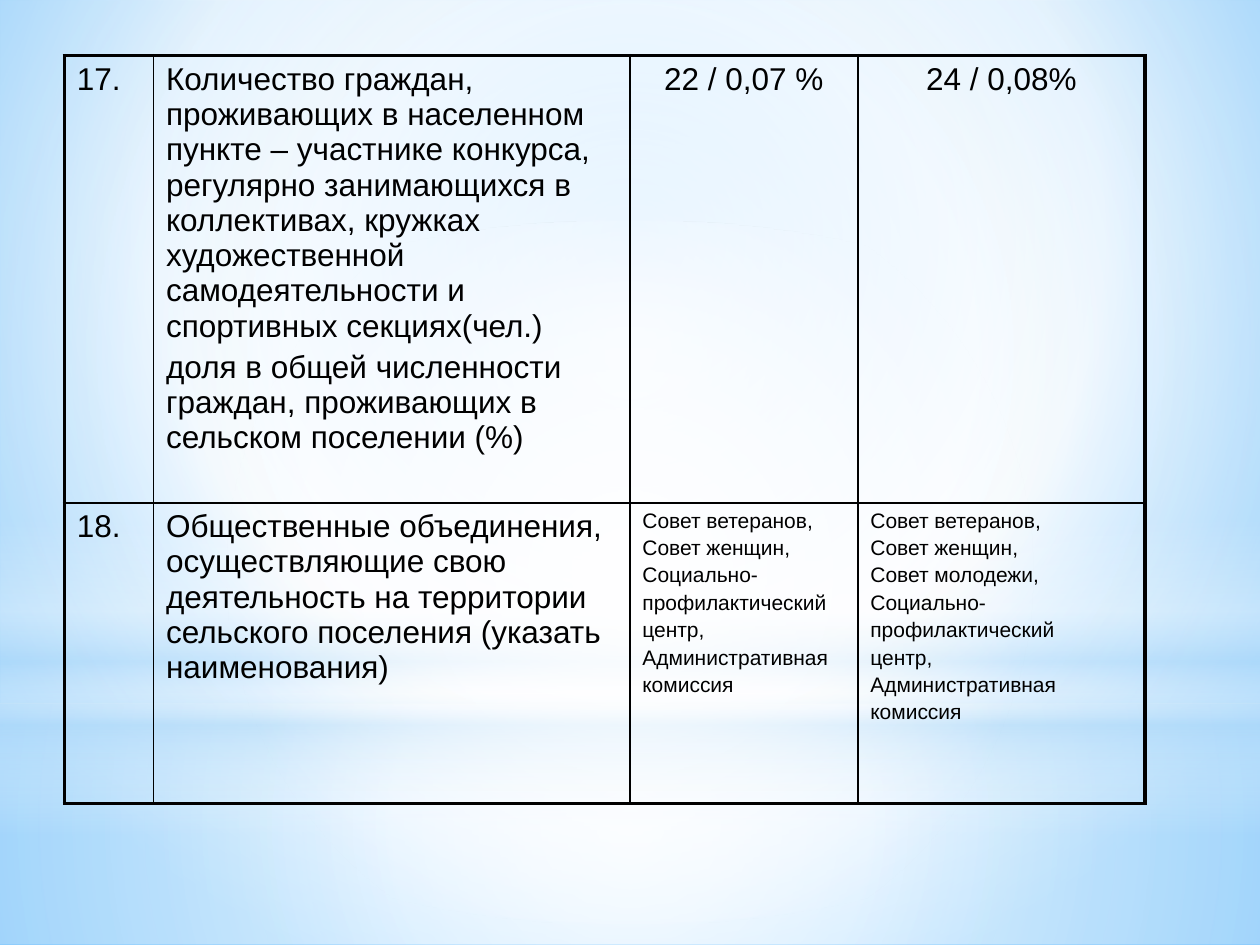
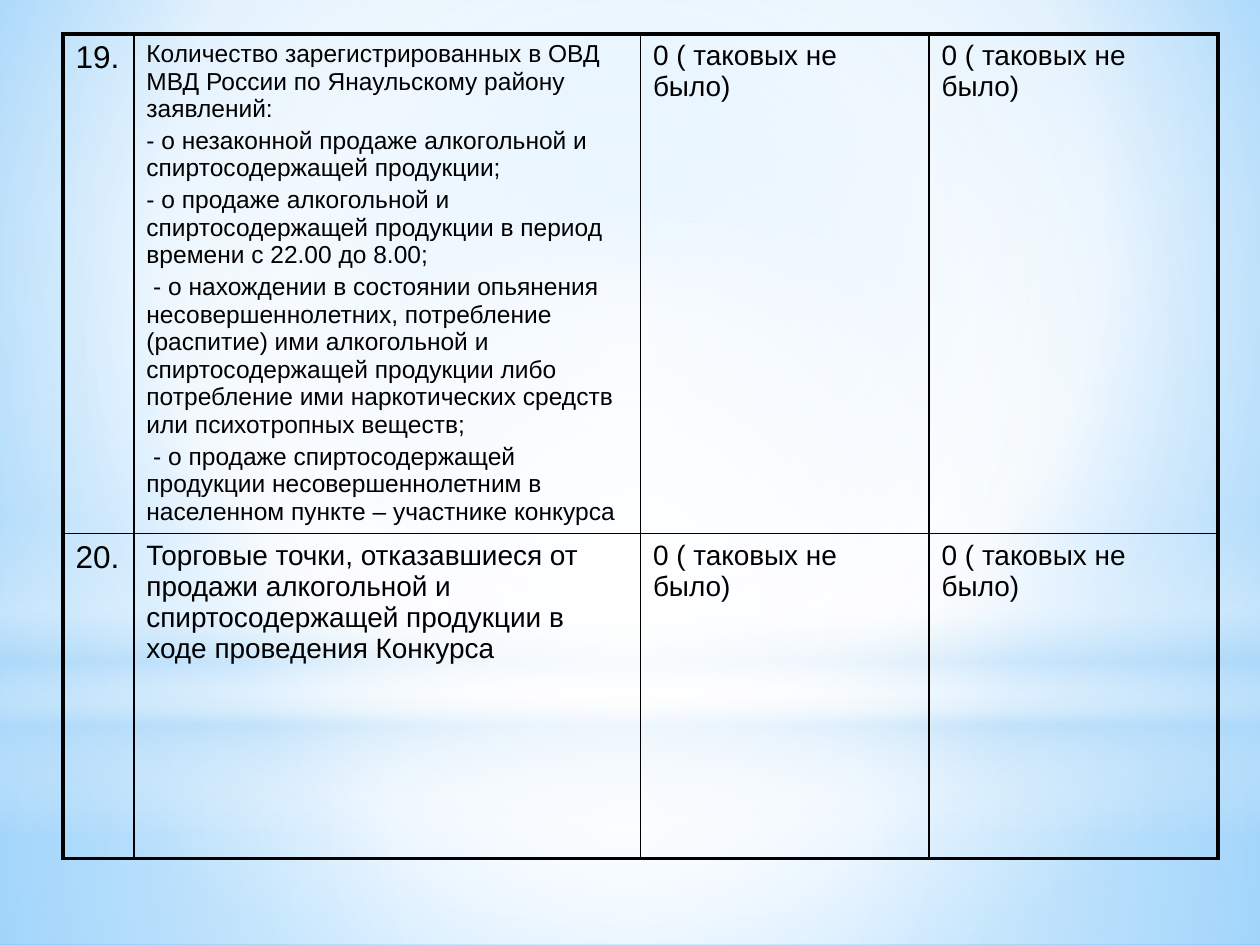
from lxml import etree
from pptx import Presentation
from pptx.dml.color import RGBColor
from pptx.enum import shapes, text
from pptx.oxml import ns
from pptx.util import Pt

BLACK = RGBColor(0, 0, 0)
WHITE = RGBColor(255, 255, 255)
SKY = RGBColor(0x9E, 0xD5, 0xFF)
BLUE = RGBColor(0x5B, 0xB9, 0xFF)
PALE = RGBColor(0xB4, 0xDC, 0xFA)
FONT = "Arial"
THICK, THIN = 2.25, 1
WIDE, HIGH = 720, 540
BOX, OVAL = shapes.MSO_SHAPE.RECTANGLE, shapes.MSO_SHAPE.OVAL
MID = text.PP_ALIGN.CENTER
CIRCLE = '<a:path path="circle"><a:fillToRect l="{}" t="{}" r="{}" b="{}"/></a:path>'
DOWN = '<a:lin ang="5400000" scaled="0"/>'


def make(xml):
    """Parse a DrawingML fragment."""
    return etree.fromstring(xml.replace(" ", f" {ns.nsdecls('a')} ", 1))


def ring(*edges):
    """Give a circular gradient focused on edges in percent."""
    return CIRCLE.format(*(edge * 1000 for edge in edges))


def shade(host, stops, kind):
    """Swap the solid fill of host for a gradient of (place, colour, opacity)."""
    marks = "".join(
        f'<a:gs pos="{place * 1000}"><a:srgbClr val="{tone}">'
        f'<a:alpha val="{alpha * 1000}"/></a:srgbClr></a:gs>'
        for place, tone, alpha in stops)
    grad = make(f'<a:gradFill rotWithShape="1"><a:gsLst>{marks}</a:gsLst>{kind}</a:gradFill>')
    host.replace(host.find(ns.qn("a:solidFill")), grad)


def write(frame, words, size=18, align=text.PP_ALIGN.LEFT):
    """Fill a text frame with one paragraph per line of words."""
    for n, line in enumerate(words.split("\n")):
        para = frame.paragraphs[0] if n == 0 else frame.add_paragraph()
        para.alignment = align
        if n:
            para.space_before = Pt(round(size * 0.18, 1))
        run = para.add_run()
        run.text = line
        run.font.name, run.font.size = FONT, Pt(size)
        run.font.color.rgb = BLACK


class Deck:
    """Holds the show, its shared backdrop and the current slide."""

    def __init__(self):
        self.show = Presentation()
        self.show.slide_width, self.show.slide_height = Pt(WIDE), Pt(HIGH)
        self.next()
        self.back()

    def next(self):
        """Start a blank slide."""
        self.slide = self.show.slides.add_slide(self.show.slide_layouts[6])

    def back(self):
        """Set the backdrop on the master."""
        ground = self.show.slide_master.background
        ground.fill.solid()
        shade(ground._cSld.bg.bgPr,
              [(0, SKY, 100), (60, WHITE, 100), (100, BLUE, 100)], ring(20, 10, 20, 60))
        focus = ring(50, 50, 50, 50)
        self.glow(0, BOX, 402, 138, [(0, WHITE, 91), (37, WHITE, 76), (100, PALE, 79)], focus)
        self.glow(1, BOX, 0, 402, [(0, WHITE, 89), (48, WHITE, 62), (100, PALE, 79)], focus)
        self.glow(2, BOX, 297, 180,
                  [(0, WHITE, 0), (29, WHITE, 30), (45, PALE, 40),
                   (55, WHITE, 26), (65, PALE, 60), (100, WHITE, 0)], DOWN)
        self.glow(3, OVAL, 126, 402, [(0, WHITE, 100), (56, WHITE, 0)], focus)

    def glow(self, rank, form, top, tall, stops, kind):
        """Put a full-width gradient shape on the master."""
        shape = self.slide.shapes.add_shape(form, 0, Pt(top), Pt(WIDE), Pt(tall))
        shape.shadow.inherit = False
        shape.line.fill.background()
        shape.fill.solid()
        item = shape._element
        shade(item.spPr, stops, kind)
        item.nvSpPr.cNvPr.set("id", str(50 + rank))
        self.show.slide_master.shapes._spTree.insert(2 + rank, item)

    def table(self, left, top, wides, talls, rows):
        """Draw a table of (words, format) cells in a thick frame."""
        grid = self.slide.shapes.add_table(
            len(talls), len(wides), Pt(left), Pt(top), Pt(sum(wides)), Pt(sum(talls))).table
        grid.first_row = grid.horz_banding = False
        for col, wide in zip(grid.columns, wides):
            col.width = Pt(wide)
        for row, tall in zip(grid.rows, talls):
            row.height = Pt(tall)
        for r, row in enumerate(rows):
            for c, (words, form) in enumerate(row):
                cell = grid.cell(r, c)
                cell.fill.background()
                write(cell.text_frame, words, **form)
                self.edge(cell, L=c == 0, R=c == len(wides) - 1,
                          T=r == 0, B=r == len(talls) - 1)

    def edge(self, cell, **sides):
        """Line each side of a cell, thick where the side is outer."""
        props = cell._tc.get_or_add_tcPr()
        for n, (side, outer) in enumerate(sides.items()):
            width = Pt(THICK if outer else THIN)
            props.insert(n, make(
                f'<a:ln{side} w="{width}"><a:solidFill><a:srgbClr val="{BLACK}"/>'
                f'</a:solidFill></a:ln{side}>'))


CLUBS = "Совет ветеранов,\nСовет женщин,\n"
BOARD = "Социально-\nпрофилактический\nцентр,\nАдминистративная\nкомиссия"
PEOPLE = (
    "Количество граждан, проживающих в населенном пункте – участнике конкурса, "
    "регулярно занимающихся в коллективах, кружках художественной самодеятельности "
    "и спортивных секциях(чел.)\n"
    "доля в общей численности граждан, проживающих в сельском поселении (%)")
UNIONS = (
    "Общественные объединения, осуществляющие свою деятельность на территории "
    "сельского поселения (указать наименования)")
CLAIMS = (
    "Количество зарегистрированных в ОВД МВД России по Янаульскому району заявлений:\n"
    "- о незаконной продаже алкогольной и спиртосодержащей продукции;\n"
    "- о продаже алкогольной и спиртосодержащей продукции в период времени "
    "с 22.00 до 8.00;\n"
    " - о нахождении в состоянии опьянения несовершеннолетних, потребление (распитие) "
    "ими алкогольной и спиртосодержащей продукции либо потребление ими наркотических "
    "средств или психотропных веществ;\n"
    " - о продаже спиртосодержащей продукции несовершеннолетним в населенном пункте "
    "– участнике конкурса")
SHOPS = (
    "Торговые точки, отказавшиеся от продажи алкогольной и спиртосодержащей "
    "продукции в ходе проведения Конкурса")


def main():
    """Build both slides."""
    deck = Deck()
    small, none = {"size": 12}, ("0 ( таковых не было)", {"size": 16})
    deck.table(36.7, 31.7, [51, 272.2, 130.3, 164.2], [255.6, 172], [
        [("17.", {}), (PEOPLE, {}),
         ("22 / 0,07 %", {"align": MID}), ("24 / 0,08%", {"align": MID})],
        [("18.", {}), (UNIONS, {}),
         (CLUBS + BOARD, small), (CLUBS + "Совет молодежи,\n" + BOARD, small)]])
    deck.next()
    deck.table(36, 19.4, [40.5, 289.5, 165, 165], [285.5, 185.8], [
        [("19.", {}), (CLAIMS, {"size": 14}), none, none],
        [("20.", {}), (SHOPS, {"size": 16}), none, none]])
    deck.show.save("out.pptx")


if __name__ == "__main__":
    main()
